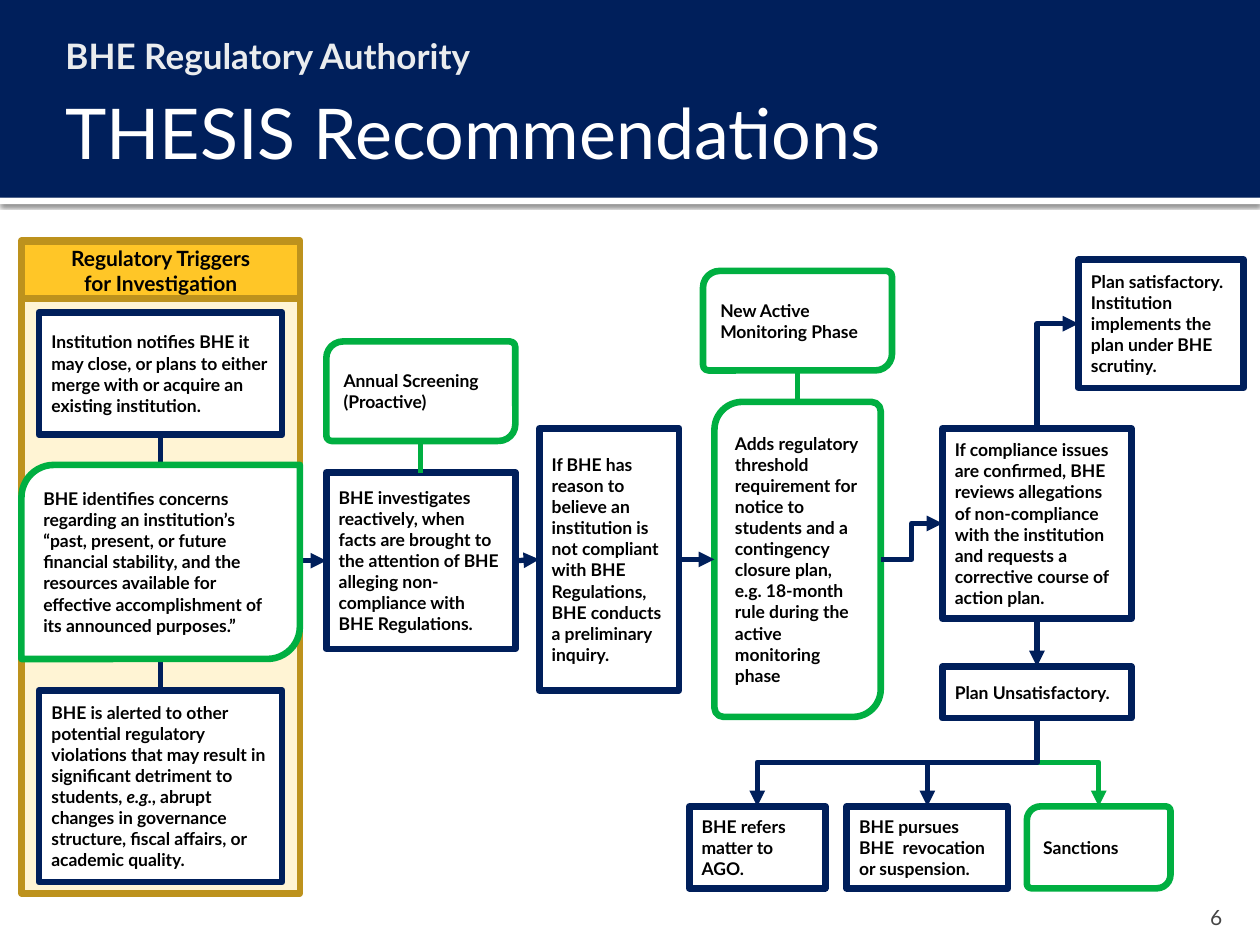
from dataclasses import dataclass

from lxml.etree import SubElement
from pptx import Presentation
from pptx.dml.color import RGBColor
from pptx.enum.shapes import MSO_CONNECTOR, MSO_SHAPE
from pptx.enum.text import MSO_ANCHOR, PP_ALIGN
from pptx.oxml.ns import qn
from pptx.util import Inches, Pt

TOP, LEFT, BOTTOM, RIGHT = range(4)


@dataclass(frozen=True)
class Theme:
    font: str = "Lato"
    navy: str = "001F5B"
    green: str = "00AF41"
    gold: str = "FFC627"
    dark_gold: str = "BD921D"
    cream: str = "FFF4D4"
    white: str = "FFFFFF"
    black: str = "000000"
    pale: str = "EAECEE"
    gray: str = "454545"
    title: int = 40
    subtitle: int = 20
    label: int = 12
    body: int = 10
    outline: float = 3.78
    link: float = 3


THEME = Theme()


@dataclass(frozen=True)
class Box:
    left: float
    top: float
    width: float
    height: float

    def inner(self, left, top, width, height):
        return Box(self.left + left, self.top + top, width, height)

    def lengths(self):
        return [Inches(n) for n in (self.left, self.top, self.width, self.height)]


def write(shape, paragraphs, size, color, bold=True, align=PP_ALIGN.LEFT, anchor=MSO_ANCHOR.MIDDLE):
    """Fill the shape with paragraphs; a list in place of a string has its odd spans in italics."""
    frame = shape.text_frame
    frame.word_wrap = True
    frame.vertical_anchor = anchor
    for index, content in enumerate(paragraphs):
        para = frame.paragraphs[0] if index == 0 else frame.add_paragraph()
        para.alignment = align
        para.font.name, para.font.size, para.font.bold = THEME.font, Pt(size), bold
        para.font.color.rgb = RGBColor.from_string(color)
        for position, text in enumerate([content] if isinstance(content, str) else content):
            span = para.add_run()
            span.text = text
            if position % 2:
                span.font.italic = True
    return frame


def add_text(page, box, text, size, color, **style):
    return write(page.shapes.add_textbox(*box.lengths()), [text], size, color, **style)


def add_block(page, box, fill, line=None, kind=MSO_SHAPE.RECTANGLE):
    block = page.shapes.add_shape(kind, *box.lengths())
    block.shadow.inherit = False
    block.fill.solid()
    block.fill.fore_color.rgb = RGBColor.from_string(fill)
    if line:
        block.line.color.rgb = RGBColor.from_string(line)
        block.line.width = Pt(THEME.outline)
    else:
        block.line.fill.background()
    return block


def add_step(page, box, *paragraphs):
    step = add_block(page, box, THEME.white, THEME.navy)
    write(step, paragraphs, THEME.body, THEME.black)
    return step


def add_new_step(page, box, *paragraphs, corners=(0.167, 0.055)):
    """A recommended addition: green outline with rounded diagonal corners."""
    step = add_block(page, box, THEME.white, THEME.green, MSO_SHAPE.ROUND_2_DIAG_RECTANGLE)
    for index, corner in enumerate(corners):
        step.adjustments[index] = corner
    write(step, paragraphs, THEME.body, THEME.black)
    return step


def side_middle(shape, side):
    x = {LEFT: 0, RIGHT: shape.width}.get(side, shape.width // 2)
    y = {TOP: 0, BOTTOM: shape.height}.get(side, shape.height // 2)
    return shape.left + x, shape.top + y


def add_line(page, start, end, color=THEME.navy, arrow=True, kind=MSO_CONNECTOR.STRAIGHT):
    line = page.shapes.add_connector(kind, *start, *end)
    line.line.color.rgb = RGBColor.from_string(color)
    line.line.width = Pt(THEME.link)
    if arrow:
        SubElement(line.line._get_or_add_ln(), qn("a:tailEnd"), type="triangle")
    SubElement(line._element.spPr, qn("a:effectLst"))
    return line


def link(page, first, first_side, last, last_side, color=THEME.navy, arrow=True):
    """Join two shapes with a straight line."""
    line = add_line(page, side_middle(first, first_side), side_middle(last, last_side), color, arrow)
    if first.auto_shape_type == MSO_SHAPE.RECTANGLE:
        line.begin_connect(first, first_side)
    if last.auto_shape_type == MSO_SHAPE.RECTANGLE:
        line.end_connect(last, last_side)


def bend(page, first, first_side, last, last_side, color=THEME.navy):
    """Join two shapes with an elbow; one that leaves vertically is turned a quarter."""
    start, end = side_middle(first, first_side), side_middle(last, last_side)
    vertical = first_side in (TOP, BOTTOM)
    if vertical:
        (x1, y1), (x2, y2) = start, end
        middle_x, middle_y = (x1 + x2) // 2, (y1 + y2) // 2
        half_x, half_y = (x2 - x1) // 2, (y2 - y1) // 2
        start = middle_x - half_y, middle_y + half_x
        end = middle_x + half_y, middle_y - half_x
    line = add_line(page, start, end, color, kind=MSO_CONNECTOR.ELBOW)
    properties = line._element.spPr
    if vertical:
        properties.find(qn("a:xfrm")).set("rot", "5400000")
    if vertical and last_side in (LEFT, RIGHT):
        properties.find(qn("a:prstGeom")).set("prst", "bentConnector2")


def draw_header(page, box):
    strip = add_block(page, box.inner(0, box.height, box.width, 0.05), THEME.white)
    shadow = SubElement(strip._element.spPr.find(qn("a:effectLst")), qn("a:outerShdw"),
                        blurRad=str(Pt(2.5)), dist=str(Pt(0.8)), dir="5400000", rotWithShape="0")
    shade = SubElement(shadow, qn("a:srgbClr"), val=THEME.black)
    SubElement(shade, qn("a:alpha"), val="60000")
    add_block(page, box, THEME.navy)
    subtitle = add_text(page, box.inner(0.33, 0.17, 9.34, 0.5), "BHE Regulatory Authority",
                        THEME.subtitle, THEME.pale, anchor=MSO_ANCHOR.TOP)
    subtitle.margin_left, subtitle.margin_top = Inches(0.19), Inches(0.1)
    add_text(page, box.inner(0.42, 0.58, 9.17, 0.92), "THESIS Recommendations",
             THEME.title, THEME.white, bold=False)


def draw_process(page, box):
    """Draw the review steps and return the last one."""
    investigate = add_step(page, box.inner(0, 1.69, 1.5, 1.4), "BHE investigates reactively, when facts are brought to the attention of BHE alleging non-compliance with BHE Regulations.")
    inquiry = add_step(page, box.inner(1.69, 1.34, 1.11, 2.08), "If BHE has reason to believe an institution is not compliant with BHE Regulations, BHE conducts a preliminary inquiry.")
    review = add_step(page, box.inner(4.89, 1.34, 1.5, 1.51), "If compliance issues are confirmed, BHE reviews allegations of non-compliance with the institution and requests a corrective course of action plan.")
    satisfactory = add_step(page, box.inner(5.97, 0, 1.31, 1.02), "Plan satisfactory. Institution implements the plan under BHE scrutiny.")
    unsatisfactory = add_step(page, box.inner(4.89, 3.23, 1.5, 0.41), "Plan Unsatisfactory.")
    screening = add_new_step(page, box.inner(0, 0.65, 1.5, 0.79), "Annual Screening", "(Proactive)")
    monitoring = add_new_step(page, box.inner(2.99, 0.09, 1.5, 0.79), "New Active Monitoring Phase")
    threshold = add_new_step(page, box.inner(3.08, 1.13, 1.32, 2.5), "Adds regulatory threshold requirement for notice to students and a contingency closure plan, e.g. 18-month rule during the active monitoring phase")

    entry_x, entry_y = side_middle(investigate, LEFT)
    entry = add_line(page, (entry_x - Inches(0.36), entry_y), (entry_x, entry_y))
    entry.end_connect(investigate, LEFT)
    link(page, investigate, RIGHT, inquiry, LEFT)
    link(page, inquiry, RIGHT, threshold, LEFT)
    link(page, review, BOTTOM, unsatisfactory, TOP)
    link(page, screening, BOTTOM, investigate, TOP, THEME.green, arrow=False)
    link(page, monitoring, BOTTOM, threshold, TOP, THEME.green, arrow=False)
    bend(page, review, TOP, satisfactory, LEFT)
    bend(page, threshold, RIGHT, review, LEFT)
    return unsatisfactory


def draw_outcomes(page, box, source):
    top, height = 0.7, box.height - 0.7
    sanctions = add_new_step(page, box.inner(2.68, top, 1.14, height), "Sanctions")
    referral = add_step(page, box.inner(0, top, 1.08, height), "BHE refers matter to AGO.")
    revocation = add_step(page, box.inner(1.25, top, 1.28, height), "BHE pursues BHE  revocation or suspension.")
    bend(page, source, BOTTOM, sanctions, TOP, THEME.green)
    for outcome in (referral, revocation):
        bend(page, source, BOTTOM, outcome, TOP)


def draw_triggers(page, box):
    add_block(page, box, THEME.cream, THEME.dark_gold)
    heading = add_block(page, box.inner(0, 0.01, box.width, 0.45), THEME.gold, THEME.dark_gold)
    write(heading, ["Regulatory Triggers", "for Investigation"], THEME.label, THEME.black, align=PP_ALIGN.CENTER)
    margin = 0.14
    width = box.width - 2 * margin
    notice = add_step(page, box.inner(margin, 0.57, width, 0.97), "Institution notifies BHE it may close, or plans to either merge with or acquire an existing institution.")
    alert = add_step(page, box.inner(margin, 3.57, width, 1.52), [
        "BHE is alerted to other potential regulatory violations that may result in significant detriment to students, ",
        "e.g., ", "abrupt changes in governance structure, fiscal affairs, or academic quality."])
    link(page, notice, BOTTOM, alert, TOP, arrow=False)
    add_new_step(page, box.inner(0, 1.78, box.width, 1.54), "BHE identifies concerns regarding an institution’s “past, present, or future financial stability, and the resources available for effective accomplishment of its announced purposes.”", corners=(0.167, 0))


def main():
    deck = Presentation()
    deck.slide_width, deck.slide_height = Inches(10), Inches(7.5)
    page = deck.slides.add_slide(deck.slide_layouts[6])
    draw_header(page, Box(0, 0, 10, 1.57))
    unsatisfactory = draw_process(page, Box(2.59, 2.06, 7.28, 3.64))
    draw_triggers(page, Box(0.17, 1.91, 2.21, 5.18))
    draw_outcomes(page, Box(5.47, 5.7, 3.82, 1.35), unsatisfactory)
    number = add_text(page, Box(9, 7.08, 0.8, 0.3), "6", THEME.label, THEME.gray, bold=False,
                      align=PP_ALIGN.RIGHT, anchor=MSO_ANCHOR.BOTTOM)
    number.margin_bottom = 0
    deck.save("out.pptx")


if __name__ == "__main__":
    main()
